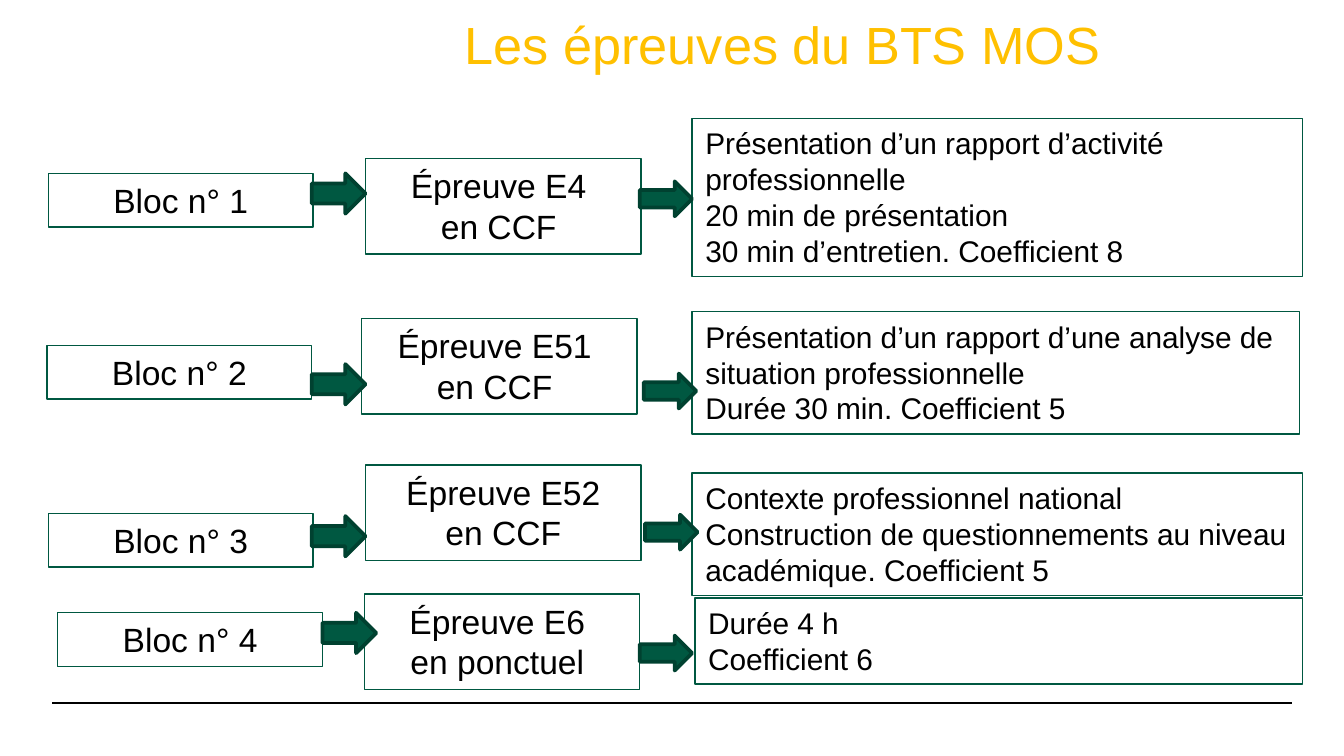
from lxml.etree import SubElement
from pptx import Presentation
from pptx.dml.color import RGBColor
from pptx.enum.shapes import MSO_CONNECTOR, MSO_SHAPE
from pptx.enum.text import MSO_ANCHOR, MSO_AUTO_SIZE, PP_ALIGN
from pptx.oxml.ns import qn
from pptx.util import Inches, Pt

GREEN = RGBColor(0x00, 0x58, 0x41)
DARK = RGBColor(0x00, 0x41, 0x30)
GOLD = RGBColor(0xFF, 0xC0, 0x00)
BLACK = RGBColor(0x00, 0x00, 0x00)
FONT = "Arial"
LEFT = 0.35

ROWS = [
    (0.88, "Bloc n° 1", ["Épreuve E4 ", "en CCF "],
     ["Présentation d’un rapport d’activité professionnelle",
      "20 min de présentation", "30 min d’entretien. Coefficient 8"],
     [(0.01, 0.41), (2.37, 0.3), (4.8, 0), (1.97, 0.41), (4.41, 0.47)], (4.54, 1.18)),
    (2.32, "Bloc n° 2", ["Épreuve E51 ", "en CCF "],
     ["Présentation d’un rapport d’une analyse de situation professionnelle",
      "Durée 30 min. Coefficient 5"],
     [(0, 0.25), (2.34, 0.05), (4.8, 0), (1.97, 0.39), (4.44, 0.46)], (4.52, 0.91)),
    (3.46, "Bloc n° 3", ["Épreuve E52", " en CCF "],
     ["Contexte professionnel national",
      "Construction de questionnements au niveau académique. Coefficient 5"],
     [(0.01, 0.36), (2.37, 0), (4.8, 0.06), (1.97, 0.38), (4.45, 0.37)], (4.54, 0.91)),
    (4.42, "Bloc n° 4", ["Épreuve E6 ", "en ponctuel "],
     ["Durée 4 h", "Coefficient 6"],
     [(0.08, 0.14), (2.36, 0), (4.82, 0.03), (2.05, 0.14), (4.41, 0.31)], (4.52, 0.64)),
]


def add_run(para, text, size, color, bold=False):
    """Add one formatted run to a paragraph."""
    run = para.add_run()
    run.text = text
    font = run.font
    font.name, font.size, font.bold = FONT, Pt(size), bold
    font.color.rgb = color


def add_form(slide, kind, left, top, size, color, weight):
    """Add an outlined shape without shadow."""
    form = slide.shapes.add_shape(
        kind, Inches(left), Inches(top), Inches(size[0]), Inches(size[1]))
    form.shadow.inherit = False
    form.line.color.rgb = color
    form.line.width = Pt(weight)
    return form


def add_box(slide, left, top, size, lines, points, align):
    """Add a framed box with one paragraph per line."""
    box = add_form(slide, MSO_SHAPE.RECTANGLE, left, top, size, GREEN, 0.75)
    box.fill.background()
    frame = box.text_frame
    frame.word_wrap = True
    frame.auto_size = MSO_AUTO_SIZE.SHAPE_TO_FIT_TEXT
    frame.vertical_anchor = MSO_ANCHOR.TOP
    for num, line in enumerate(lines):
        para = frame.add_paragraph() if num else frame.paragraphs[0]
        para.alignment = align
        add_run(para, line, points, BLACK)


def add_arrow(slide, left, top, size):
    """Add a green block arrow."""
    arrow = add_form(slide, MSO_SHAPE.RIGHT_ARROW, left, top, size, DARK, 2)
    arrow.fill.solid()
    arrow.fill.fore_color.rgb = GREEN


def add_row(slide, left, top, block, exam, detail, spots, size):
    """Place a block, its exam, its details and the two arrows."""
    places = [(left + dx, top + dy) for dx, dy in spots]
    add_box(slide, *places[0], (1.97, 0.4), [block], 18, PP_ALIGN.CENTER)
    add_box(slide, *places[1], (2.05, 0.71), exam, 18, PP_ALIGN.CENTER)
    add_box(slide, *places[2], size, detail, 16, PP_ALIGN.LEFT)
    add_arrow(slide, *places[3], (0.4, 0.3))
    add_arrow(slide, *places[4], (0.39, 0.26))


def add_title(slide, left, top, width, height):
    """Move and fill the title placeholder."""
    title = slide.shapes.title
    title.left, title.top = Inches(left), Inches(top)
    title.width, title.height = Inches(width), Inches(height)
    frame = title.text_frame
    frame.word_wrap = True
    frame.auto_size = MSO_AUTO_SIZE.NONE
    frame.vertical_anchor = MSO_ANCHOR.TOP
    frame.margin_left = frame.margin_right = 0
    frame.margin_top = frame.margin_bottom = 0
    para = frame.paragraphs[0]
    para.alignment = PP_ALIGN.LEFT
    para.line_spacing = 0.9
    add_run(para, " ", 28, BLACK, True)
    add_run(para, "Les épreuves du BTS MOS", 28, GOLD)


def add_rule(slide, left, top, width):
    """Draw the thin rule at the foot of the slide."""
    rule = slide.shapes.add_connector(
        MSO_CONNECTOR.STRAIGHT, Inches(left), Inches(top),
        Inches(left + width), Inches(top))
    rule.line.color.rgb = BLACK
    rule.line.width = Pt(0.8)
    SubElement(rule.element.spPr, qn("a:effectLst"))


def main():
    """Build and save the slide."""
    deck = Presentation()
    deck.slide_width = Inches(10)
    deck.slide_height = deck.slide_width * 9 // 16
    slide = deck.slides.add_slide(deck.slide_layouts[5])
    add_rule(slide, 0.39, 5.23, 9.22)
    add_title(slide, 3.35, 0.14, 6.15, 0.73)
    for row in ROWS:
        add_row(slide, LEFT, *row)
    deck.save("out.pptx")


if __name__ == "__main__":
    main()
